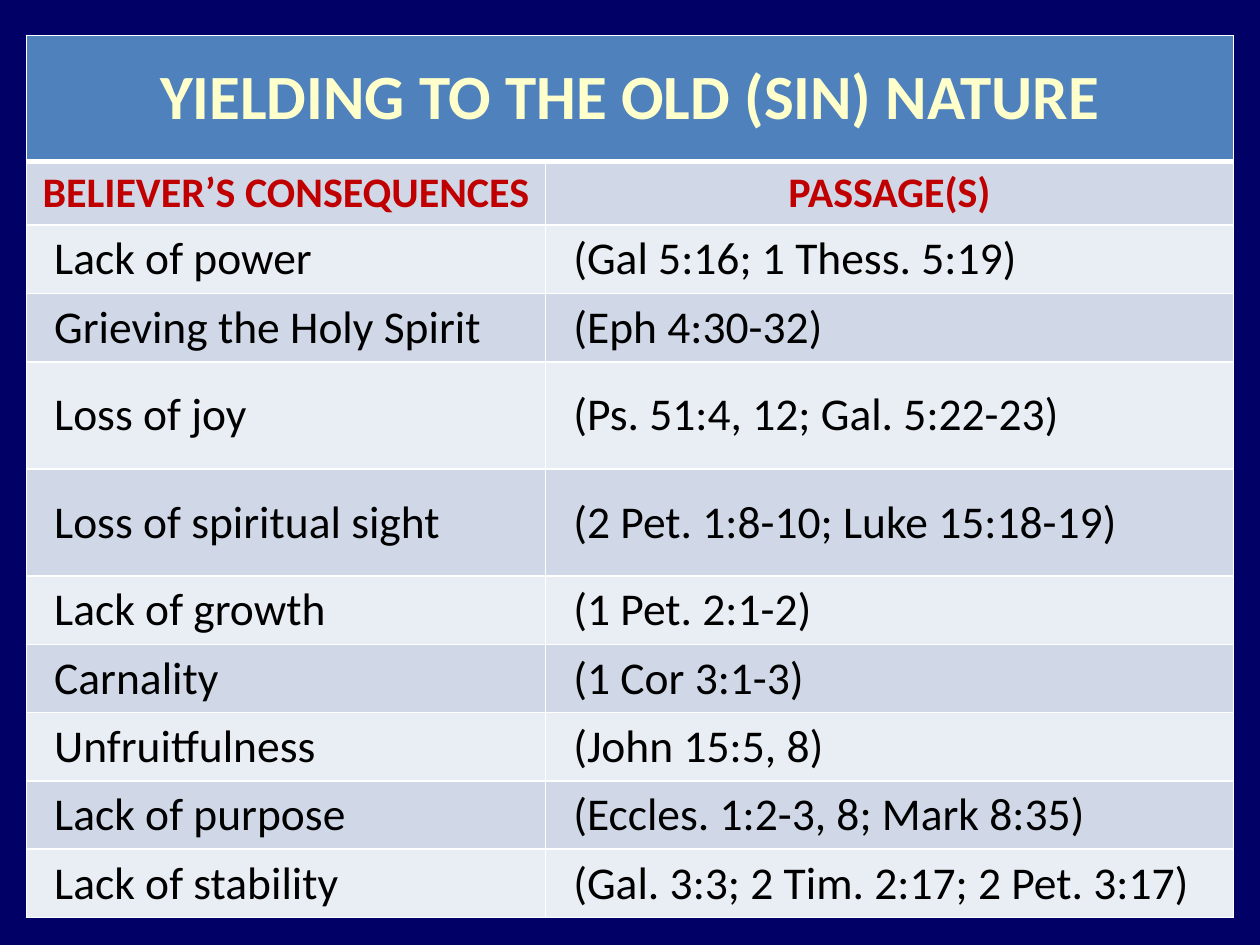
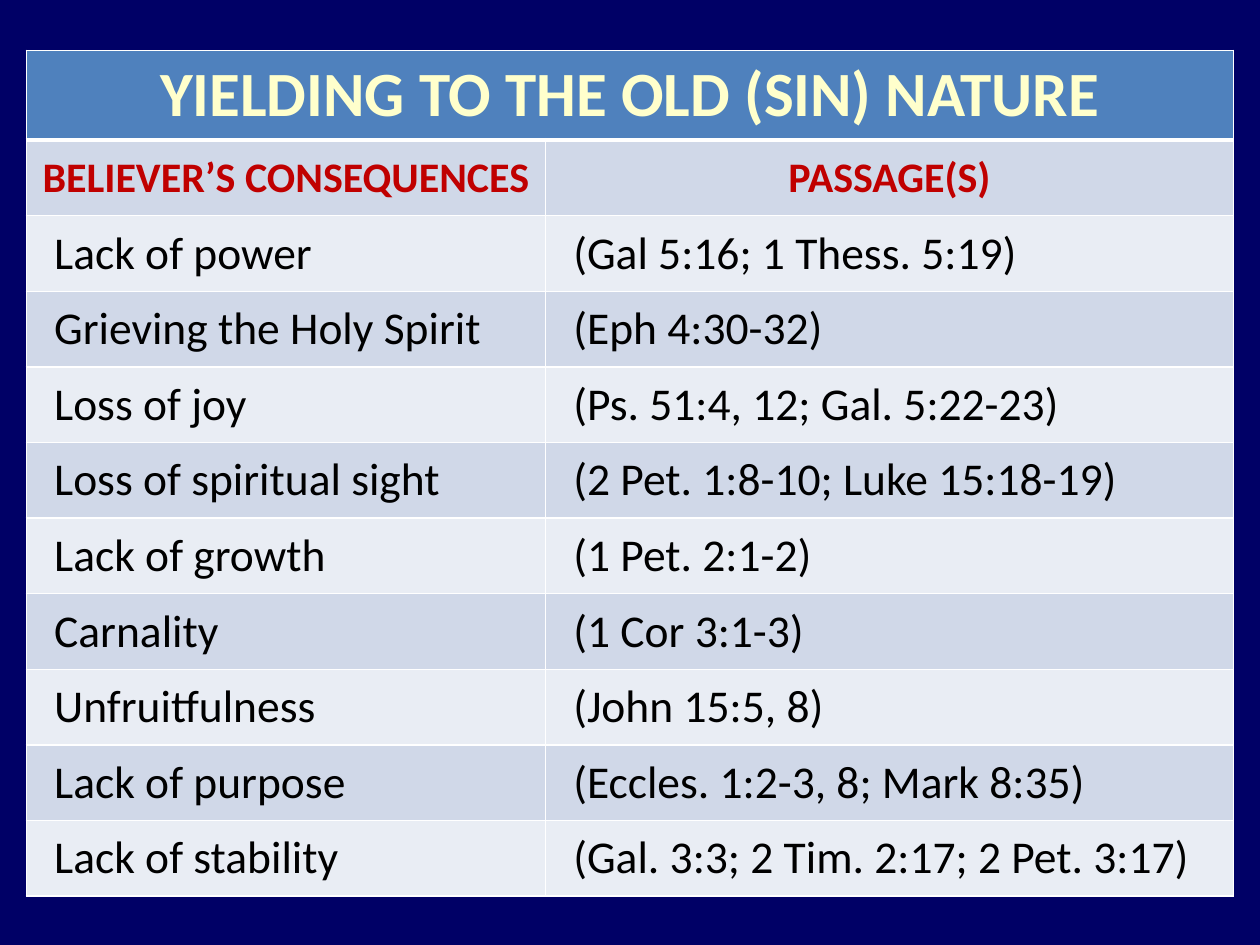
"""Build two slides that tabulate the consequences of yielding to the old nature."""
from lxml import etree
from pptx import Presentation
from pptx.dml.color import RGBColor
from pptx.enum.text import MSO_ANCHOR, PP_ALIGN
from pptx.oxml.ns import qn
from pptx.util import Inches, Pt

MIDDLE = MSO_ANCHOR.MIDDLE
CENTER, LEFT = PP_ALIGN.CENTER, PP_ALIGN.LEFT

TITLE = "YIELDING TO THE OLD (SIN) NATURE"
HEADINGS = ("BELIEVER’S CONSEQUENCES", "PASSAGE(S)")
CONSEQUENCES = [
    ("Lack of power", "(Gal 5:16; 1 Thess. 5:19)"),
    ("Grieving the Holy Spirit", "(Eph 4:30-32)"),
    ("Loss of joy", "(Ps. 51:4, 12; Gal. 5:22-23)"),
    ("Loss of spiritual sight", "(2 Pet. 1:8-10; Luke 15:18-19)"),
    ("Lack of growth", "(1 Pet. 2:1-2)"),
    ("Carnality", "(1 Cor 3:1-3)"),
    ("Unfruitfulness", "(John 15:5, 8)"),
    ("Lack of purpose", "(Eccles. 1:2-3, 8; Mark 8:35)"),
    ("Lack of stability", "(Gal. 3:3; 2 Tim. 2:17; 2 Pet. 3:17)"),
]
ROWS = [(TITLE, ""), HEADINGS, *CONSEQUENCES]

SLIDES = [
    {"top": 0.28, "height": 6.93,
     "rows": [1] + [0.47] * 3 + [0.85] * 2 + [0.47] * 5},
    {"top": 0.4, "height": 6.7, "rows": [0.6] * len(ROWS)},
]
TABLE_LEFT = 0.21
COLUMNS = (4.12, 5.46)
INDENT = 0.12
FONT = "Calibri"

COLORS = {
    "background": "000066",
    "title_band": "4F81BD",
    "title": "FFFFCC",
    "heading": "C00000",
    "body": "000000",
    "dark_band": "D0D8E8",
    "light_band": "E9EDF4",
    "border": "FFFFFF",
}
STYLES = {
    "title": {"size": 36, "bold": True, "align": CENTER},
    "heading": {"size": 24, "bold": True, "align": CENTER},
    "body": {"size": 26, "bold": False, "align": LEFT},
}


def rgb(name):
    return RGBColor.from_string(COLORS[name])


def set_borders(cell, top, bottom):
    tcPr = cell._tc.get_or_add_tcPr()
    for side, width in (("L", 1), ("R", 1), ("T", top), ("B", bottom)):
        ln = etree.SubElement(tcPr, qn(f"a:ln{side}"), w=str(Pt(width)))
        fill = etree.SubElement(ln, qn("a:solidFill"))
        etree.SubElement(fill, qn("a:srgbClr"), val=COLORS["border"])


def fill_cell(cell, text, row):
    kind = ("title", "heading")[row] if row < 2 else "body"
    band = "title_band" if row == 0 else ("light_band", "dark_band")[row % 2]
    set_borders(cell, 3 if row == 1 else 1, 3 if row == 0 else 1)
    cell.fill.solid()
    cell.fill.fore_color.rgb = rgb(band)
    cell.vertical_anchor = MIDDLE
    if not text:
        return
    style = STYLES[kind]
    cell.text_frame.text = text
    p = cell.text_frame.paragraphs[0]
    p.alignment = style["align"]
    if kind == "body":
        pPr = p._p.get_or_add_pPr()
        pPr.set("marL", str(Inches(INDENT)))
        pPr.set("indent", "0")
    font = p.runs[0].font
    font.name, font.size, font.bold = FONT, Pt(style["size"]), style["bold"]
    font.color.rgb = rgb(kind)


def band_for_rows(table):
    for row, texts in enumerate(ROWS):
        for col, text in enumerate(texts):
            fill_cell(table.cell(row, col), text, row)


def add_consequences_slide(prs, layout):
    s = prs.slides.add_slide(prs.slide_layouts[6])
    s.background.fill.solid()
    s.background.fill.fore_color.rgb = rgb("background")
    frame = s.shapes.add_table(
        len(ROWS), len(COLUMNS), Inches(TABLE_LEFT), Inches(layout["top"]),
        Inches(sum(COLUMNS)), Inches(layout["height"]))
    table = frame.table
    for column, width in zip(table.columns, COLUMNS):
        column.width = Inches(width)
    for row, height in zip(table.rows, layout["rows"]):
        row.height = Inches(height)
    frame.height = Inches(layout["height"])
    band_for_rows(table)
    table.cell(0, 0).merge(table.cell(0, len(COLUMNS) - 1))


def main():
    prs = Presentation()
    prs.slide_width, prs.slide_height = Inches(10), Inches(7.5)
    for layout in SLIDES:
        add_consequences_slide(prs, layout)
    prs.save("out.pptx")


if __name__ == "__main__":
    main()
